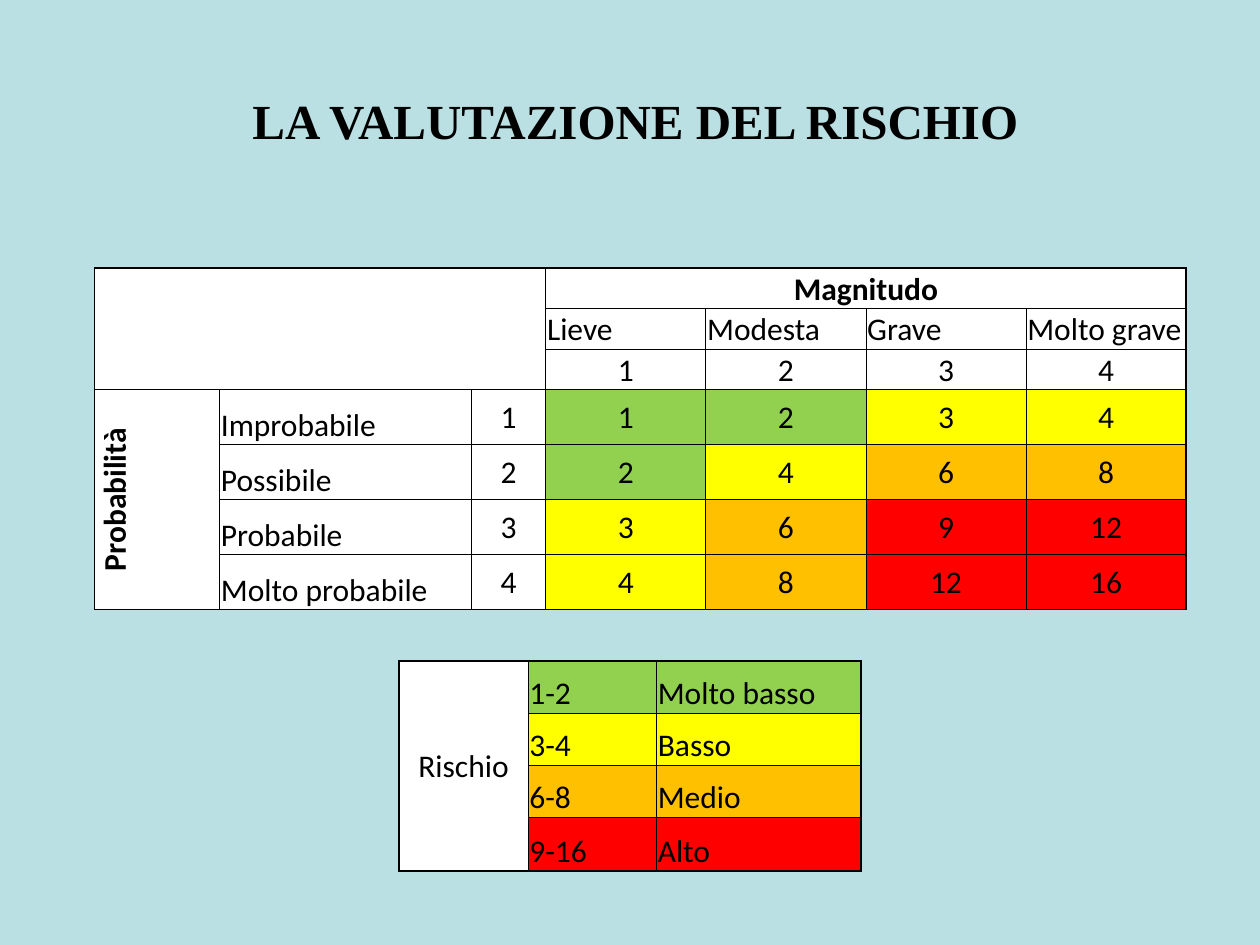
from lxml import etree
from pptx import Presentation
from pptx.dml.color import RGBColor
from pptx.enum import text
from pptx.oxml import ns
from pptx.util import Pt

TITLE = "LA VALUTAZIONE DEL RISCHIO"
MAGNITUDES = ["Lieve", "Modesta", "Grave", "Molto grave"]
PROBABILITIES = ["Improbabile", "Possibile", "Probabile", "Molto probabile"]
# highest score, range, label, colour
LEVELS = [
    (2, "1-2", "Molto basso", "92D050"),
    (4, "3-4", "Basso", "FFFF00"),
    (8, "6-8", "Medio", "FFC000"),
    (16, "9-16", "Alto", "FF0000"),
]
BLACK, WHITE, BACKGROUND = "000000", "FFFFFF", "BBE0E3"
MIDDLE, BOTTOM = text.MSO_ANCHOR.MIDDLE, text.MSO_ANCHOR.BOTTOM
LEFT, CENTER = text.PP_ALIGN.LEFT, text.PP_ALIGN.CENTER


def rgb(value):
    return RGBColor.from_string(value)


def set_font(para, name, size, bold):
    font = para.font
    font.name, font.size, font.bold = name, Pt(size), bold
    font.color.rgb = rgb(BLACK)


def add_child(parent, tag, **attributes):
    return etree.SubElement(parent, ns.qn(tag), attributes)


def add_grid(page, left, top, widths, heights):
    """Add a white table without a banded style."""
    frame = page.shapes.add_table(len(heights), len(widths), Pt(left), Pt(top),
                                  Pt(sum(widths)), Pt(sum(heights)))
    table = frame.table
    table.first_row = table.horz_banding = False
    for column, width in zip(table.columns, widths):
        column.width = Pt(width)
    for row, height in zip(table.rows, heights):
        row.height = Pt(height)
    for cell in table.iter_cells():
        fill_cell(cell)
    return table


def fill_cell(cell, words="", colour=WHITE, align=CENTER, anchor=MIDDLE, bold=False):
    cell.margin_left = cell.margin_right = cell.margin_top = Pt(0.75)
    cell.margin_bottom = Pt(0)
    cell.vertical_anchor = anchor
    cell.fill.solid()
    cell.fill.fore_color.rgb = rgb(colour)
    para = cell.text_frame.paragraphs[0]
    para.text = words
    para.alignment = align
    set_font(para, "Calibri", 18, bold)


def draw_borders(table):
    """Rule every visible cell thinly, and the outside of the table at 1 pt."""
    last_row, last_column = len(table.rows), len(table.columns)
    for r in range(last_row):
        for c in range(last_column):
            cell = table.cell(r, c)
            if cell.is_spanned:
                continue
            height = cell.span_height if cell.is_merge_origin else 1
            width = cell.span_width if cell.is_merge_origin else 1
            outer = {"a:lnL": c == 0, "a:lnR": c + width == last_column,
                     "a:lnT": r == 0, "a:lnB": r + height == last_row}
            properties = cell._tc.get_or_add_tcPr()
            for index, (tag, is_outer) in enumerate(outer.items()):
                line = etree.Element(ns.qn(tag), w=str(Pt(1 if is_outer else 0.5)))
                add_child(add_child(line, "a:solidFill"), "a:srgbClr", val=BLACK)
                properties.insert(index, line)


def add_title(page):
    title = page.shapes.title
    title.left, title.top, title.width, title.height = Pt(48), Pt(48), Pt(630), Pt(41)
    frame = title.text_frame
    frame.word_wrap = True
    frame.vertical_anchor = MIDDLE
    para = frame.paragraphs[0]
    para.alignment = CENTER
    span = para.add_run()
    span.text = TITLE
    set_font(para, "Times New Roman", 28, True)
    effects = add_child(span._r.get_or_add_rPr(), "a:effectLst")
    shadow = add_child(effects, "a:outerShdw", dist=str(Pt(2)), dir="2700000", algn="tl")
    add_child(shadow, "a:srgbClr", val="808080")


def add_risk_matrix(page):
    table = add_grid(page, 54, 153.2, [71.5, 144, 42.4] + [91.5] * 4,
                     [23.2] * 3 + [31.4] * 4)
    table.cell(0, 0).merge(table.cell(2, 2))
    table.cell(0, 3).merge(table.cell(0, 6))
    table.cell(3, 0).merge(table.cell(6, 0))
    fill_cell(table.cell(0, 3), "Magnitudo", anchor=BOTTOM, bold=True)
    fill_cell(table.cell(3, 0), "Probabilità", bold=True)
    table.cell(3, 0)._tc.get_or_add_tcPr().set("vert", "vert270")
    for m, magnitude in enumerate(MAGNITUDES, 1):
        fill_cell(table.cell(1, m + 2), magnitude, align=LEFT, anchor=BOTTOM)
        fill_cell(table.cell(2, m + 2), str(m))
    for p, probability in enumerate(PROBABILITIES, 1):
        fill_cell(table.cell(p + 2, 1), probability, align=LEFT, anchor=BOTTOM)
        fill_cell(table.cell(p + 2, 2), str(p))
        for m in range(1, len(MAGNITUDES) + 1):
            score = p * m
            colour = next(level[3] for level in LEVELS if score <= level[0])
            fill_cell(table.cell(p + 2, m + 2), str(score), colour)
    draw_borders(table)


def add_legend(page):
    table = add_grid(page, 228, 377.8, [73.8, 73.4, 116.8], [29.7] * 3 + [31])
    table.cell(0, 0).merge(table.cell(3, 0))
    fill_cell(table.cell(0, 0), "Rischio")
    for r, (_, scores, label, colour) in enumerate(LEVELS):
        for c, words in enumerate((scores, label), 1):
            fill_cell(table.cell(r, c), words, colour, LEFT, BOTTOM)
    draw_borders(table)


def main():
    deck = Presentation()
    deck.slide_width, deck.slide_height = Pt(720), Pt(540)
    page = deck.slides.add_slide(deck.slide_layouts.get_by_name("Title Only"))
    page.background.fill.solid()
    page.background.fill.fore_color.rgb = rgb(BACKGROUND)
    add_title(page)
    add_risk_matrix(page)
    add_legend(page)
    deck.save("out.pptx")


if __name__ == "__main__":
    main()
